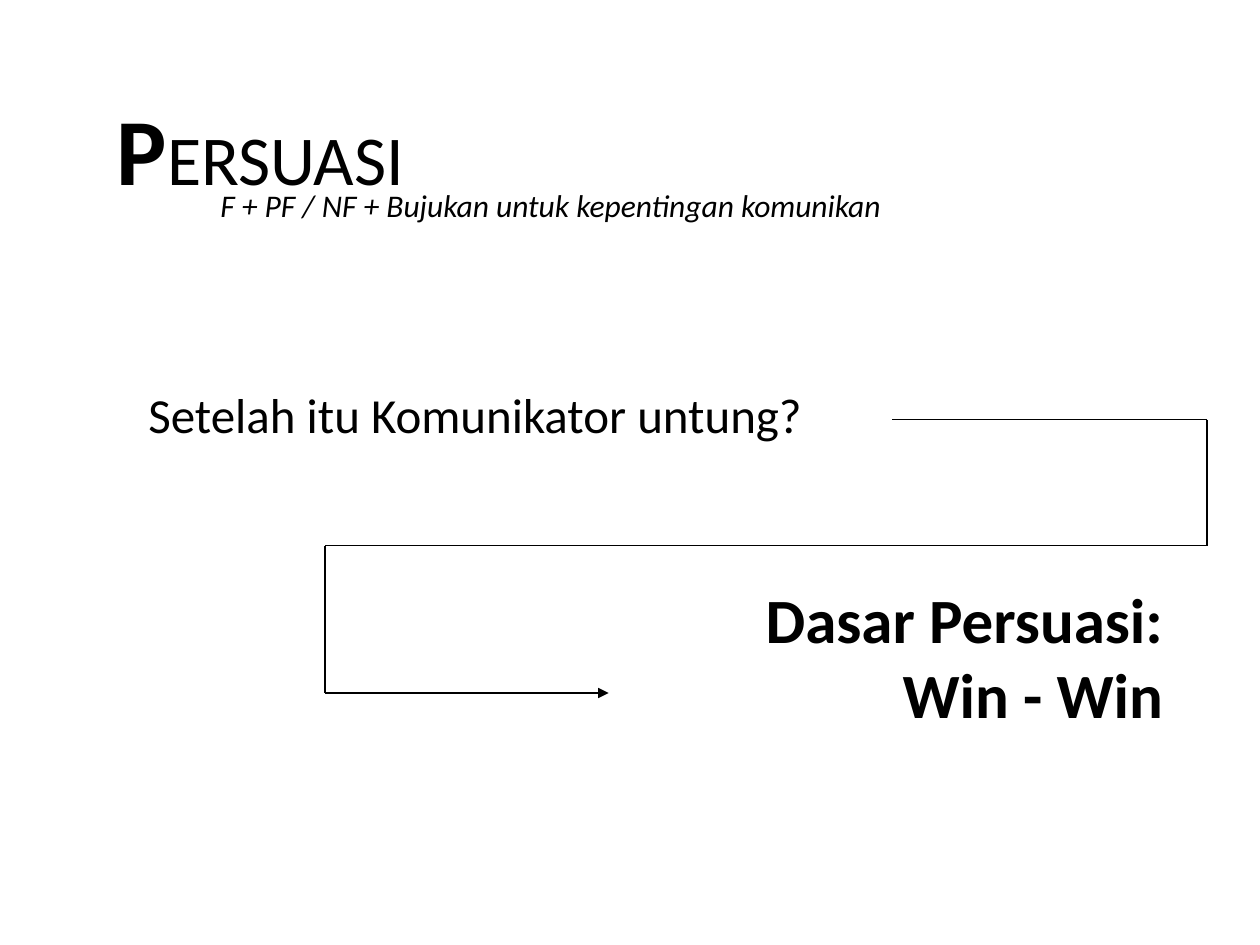
"""Builds the persuasion slide with its win-win conclusion."""
from itertools import pairwise

from lxml import etree
from pptx import Presentation
from pptx.dml.color import RGBColor
from pptx.enum.shapes import MSO_CONNECTOR
from pptx.enum.text import MSO_ANCHOR, PP_ALIGN
from pptx.oxml.ns import qn
from pptx.util import Inches, Pt

STRAIGHT = MSO_CONNECTOR.STRAIGHT
TOP, MIDDLE = MSO_ANCHOR.TOP, MSO_ANCHOR.MIDDLE
LEFT, RIGHT = PP_ALIGN.LEFT, PP_ALIGN.RIGHT


def color(hex_value):
    return RGBColor.from_string(hex_value)


def add_run(paragraph, text, size=18, bold=False, italic=False, font="Calibri", ink="000000"):
    for index, line in enumerate(text.split("\n")):
        if index:
            paragraph.add_line_break()
        run = paragraph.add_run()
        run.text = line
        run.font.name = font
        run.font.size = Pt(size)
        run.font.bold = bold
        run.font.italic = italic
        run.font.color.rgb = color(ink)


class SlideBuilder:
    def __init__(self, slide, font, ink, line_width):
        self.slide = slide
        self.font = font
        self.ink = ink
        self.line_width = Pt(line_width)

    def text(self, box, *runs, align=LEFT, anchor=TOP, wrap=True):
        frame = self.slide.shapes.add_textbox(*map(Inches, box)).text_frame
        frame.word_wrap = wrap
        frame.vertical_anchor = anchor
        paragraph = frame.paragraphs[0]
        paragraph.alignment = align
        for content, style in runs:
            add_run(paragraph, content, font=self.font, ink=self.ink, **style)

    def line(self, start, end):
        connector = self.slide.shapes.add_connector(STRAIGHT, *map(Inches, (*start, *end)))
        connector.line.color.rgb = color(self.ink)
        connector.line.width = self.line_width
        etree.SubElement(connector._element.spPr, qn("a:effectLst"))
        return connector

    def arrow_path(self, points):
        segments = [self.line(start, end) for start, end in pairwise(points)]
        outline = segments[-1].line._get_or_add_ln()
        etree.SubElement(outline, qn("a:tailEnd"), type="triangle")


def main():
    presentation = Presentation()
    presentation.slide_width, presentation.slide_height = Inches(10), Inches(7.5)
    slide = presentation.slides.add_slide(presentation.slide_layouts[6])
    builder = SlideBuilder(slide, font="Calibri", ink="000000", line_width=0.75)

    builder.text((0.83, 0.67, 3.14, 1),
                 ("P", {"size": 54, "bold": True}), ("ERSUASI", {"size": 40}), wrap=False)
    builder.text((1.65, 1.43, 6.08, 0.4),
                 ("F + PF / NF + Bujukan untuk kepentingan komunikan", {"size": 18, "italic": True}),
                 wrap=False)
    builder.text((1.08, 3, 6.17, 0.57), ("Setelah itu Komunikator untung?", {"size": 28}))
    builder.text((1.33, 4.58, 8, 1.25),
                 ("Dasar Persuasi:\nWin - Win", {"size": 36, "bold": True}),
                 align=RIGHT, anchor=MIDDLE)

    question_y, turn_y, answer_y = 3.33, 4.33, 5.5
    left_x, right_x = 2.58, 9.58
    builder.arrow_path([(7.08, question_y), (right_x, question_y), (right_x, turn_y),
                        (left_x, turn_y), (left_x, answer_y), (4.83, answer_y)])

    presentation.save("out.pptx")


if __name__ == "__main__":
    main()
